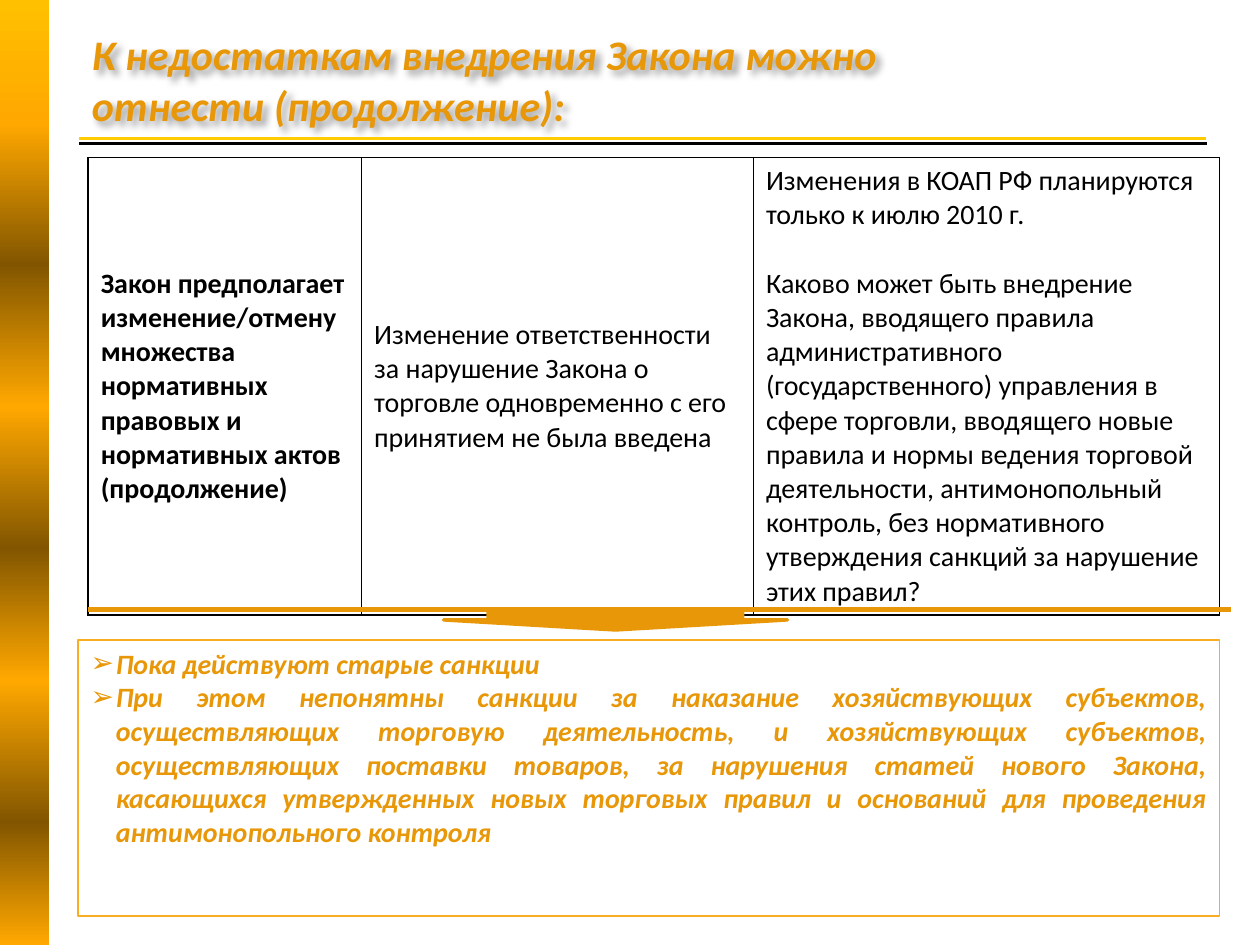
from lxml import etree
from pptx import Presentation
from pptx.dml.color import RGBColor
from pptx.enum.shapes import MSO_CONNECTOR, MSO_SHAPE
from pptx.enum.text import MSO_ANCHOR, MSO_AUTO_SIZE, PP_ALIGN
from pptx.oxml import parse_xml
from pptx.oxml.ns import nsdecls, qn
from pptx.util import Inches, Pt

RECTANGLE, DOWN_ARROW = MSO_SHAPE.RECTANGLE, MSO_SHAPE.DOWN_ARROW
STRAIGHT = MSO_CONNECTOR.STRAIGHT
MIDDLE, TOP = MSO_ANCHOR.MIDDLE, MSO_ANCHOR.TOP
LEFT, JUSTIFY = PP_ALIGN.LEFT, PP_ALIGN.JUSTIFY
FIXED = MSO_AUTO_SIZE.NONE

# Content
TITLE = "К недостаткам внедрения Закона можно отнести (продолжение):"
CELLS = [
    ["Закон предполагает изменение/отмену множества нормативных правовых "
     "и нормативных актов (продолжение)"],
    ["Изменение ответственности за нарушение Закона о торговле "
     "одновременно с его принятием не была введена"],
    ["Изменения в КОАП РФ планируются только к июлю 2010 г.",
     "Каково может быть внедрение Закона, вводящего правила "
     "административного (государственного) управления в сфере торговли, "
     "вводящего новые правила и нормы ведения торговой деятельности, "
     "антимонопольный контроль, без нормативного утверждения санкций "
     "за нарушение этих правил?"],
]
CONCLUSIONS = [
    "Пока действуют старые санкции",
    "При этом непонятны санкции за наказание хозяйствующих субъектов, "
    "осуществляющих торговую деятельность, и хозяйствующих субъектов, "
    "осуществляющих поставки товаров, за нарушения статей нового Закона, "
    "касающихся утвержденных новых торговых правил и оснований для "
    "проведения антимонопольного контроля",
]

# Look
ORANGE, BLACK, WHITE = "E79707", "000000", "FFFFFF"
BAND_STOPS = [(0, "FFC000"), (13, "FFA800"), (28, "825600"), (43, "FFA800"),
              (58, "825600"), (72, "FFA800"), (87, "825600"), (100, "FFA800")]
ACCENT = {"name": "Calibri", "bold": True, "italic": True}
COLUMN_WIDTHS = [2.17, 3.11, 3.7]
TABLE_LEFT, TABLE_TOP, TABLE_HEIGHT = 0.7, 1.25, 3.57
RULES = [  # start x, end x, y, colour, width
    (0.63, 9.58, 1.14, BLACK, 1.75),
    (0.63, 9.57, 1.1, "FFCC00", 1.75),
]
TABLE_RULE = (0.7, 9.77, 4.84, ORANGE, 3)


def color(value):
    return RGBColor.from_string(value)


def place(shape, *box):
    for side, value in zip(("left", "top", "width", "height"), box):
        setattr(shape, side, Inches(value))


def write(frame, texts, size, ink, look, align=LEFT, gap=0, bullet=None):
    for index, text in enumerate(texts):
        para = frame.paragraphs[0] if index == 0 else frame.add_paragraph()
        para.alignment = align
        para.space_before = Pt(gap if index else 0)
        if bullet:
            properties = para._p.get_or_add_pPr()
            properties.set("marL", str(Inches(0.2)))
            properties.set("indent", str(-Inches(0.2)))
            etree.SubElement(properties, qn("a:buChar")).set("char", bullet)
        span = para.add_run()
        span.text = text
        for name, value in look.items():
            setattr(span.font, name, value)
        span.font.size = Pt(size)
        span.font.color.rgb = color(ink)


def add_rule(page, start, end, y, ink, width):
    rule = page.shapes.add_connector(
        STRAIGHT, Inches(start), Inches(y), Inches(end), Inches(y))
    rule.line.color.rgb = color(ink)
    rule.line.width = Pt(width)
    etree.SubElement(rule._element.spPr, qn("a:effectLst"))


def add_borders(cell):
    for side in "LRTB":
        cell._tc.get_or_add_tcPr().append(parse_xml(
            f'<a:ln{side} {nsdecls("a")} w="{Pt(1)}"><a:solidFill>'
            f'<a:srgbClr val="{BLACK}"/></a:solidFill></a:ln{side}>'))


deck = Presentation()
deck.slide_width, deck.slide_height = Inches(10), Inches(7.5)
page = deck.slides.add_slide(deck.slide_layouts[1])

# Gradient band on the left
band = page.shapes.add_shape(RECTANGLE, 0, 0, Inches(0.39), deck.slide_height)
band.shadow.inherit = False
band.line.fill.background()
stops = "".join(f'<a:gs pos="{share * 1000}"><a:srgbClr val="{ink}"/></a:gs>'
                for share, ink in BAND_STOPS)
band._element.spPr.find(qn("a:prstGeom")).addnext(parse_xml(
    f'<a:gradFill {nsdecls("a")}><a:gsLst>{stops}</a:gsLst>'
    '<a:lin ang="5400000" scaled="0"/></a:gradFill>'))

# Title with a soft shadow, and the double rule under it
title = page.shapes.title
place(title, 0.63, 0.16, 6.72, 0.94)
title.text_frame.vertical_anchor = MIDDLE
title.text_frame.auto_size = FIXED
write(title.text_frame, [TITLE], 24, ORANGE, ACCENT)
title._element.spPr.append(parse_xml(
    f'<a:effectLst {nsdecls("a")}><a:outerShdw blurRad="50800" dist="38100" '
    'dir="2700000" algn="tl"><a:srgbClr val="000000"><a:alpha val="40000"/>'
    '</a:srgbClr></a:outerShdw></a:effectLst>'))
for rule in RULES:
    add_rule(page, *rule)

# Table
table = page.shapes.add_table(
    1, len(CELLS), Inches(TABLE_LEFT), Inches(TABLE_TOP),
    Inches(sum(COLUMN_WIDTHS)), Inches(TABLE_HEIGHT)).table
for index, (texts, width) in enumerate(zip(CELLS, COLUMN_WIDTHS)):
    table.columns[index].width = Inches(width)
    cell = table.cell(0, index)
    cell.vertical_anchor = MIDDLE
    add_borders(cell)
    cell.fill.solid()
    cell.fill.fore_color.rgb = color(WHITE)
    write(cell.text_frame, texts, 16, BLACK,
          {"name": "Calibri", "bold": index == 0}, gap=19.5)

# Conclusions
body = page.placeholders[1]
place(body, 0.62, 5.08, 9.06, 2.19)
body.line.color.rgb = color("F9AD23")
body.line.width = Pt(0.75)
body.text_frame.vertical_anchor = TOP
body.text_frame.auto_size = FIXED
write(body.text_frame, CONCLUSIONS, 16, ORANGE, ACCENT, JUSTIFY, bullet="➢")

# Arrow from the table to the conclusions
arrow = page.shapes.add_shape(DOWN_ARROW, 0, 0, 0, 0)
place(arrow, 3.52, 4.84, 2.73, 0.16)
arrow.shadow.inherit = False
arrow.adjustments[0], arrow.adjustments[1] = 0.74, 0.5
arrow.fill.solid()
arrow.fill.fore_color.rgb = color(ORANGE)
arrow.line.color.rgb = color(ORANGE)
arrow.line.width = Pt(2)
add_rule(page, *TABLE_RULE)

deck.save("out.pptx")
